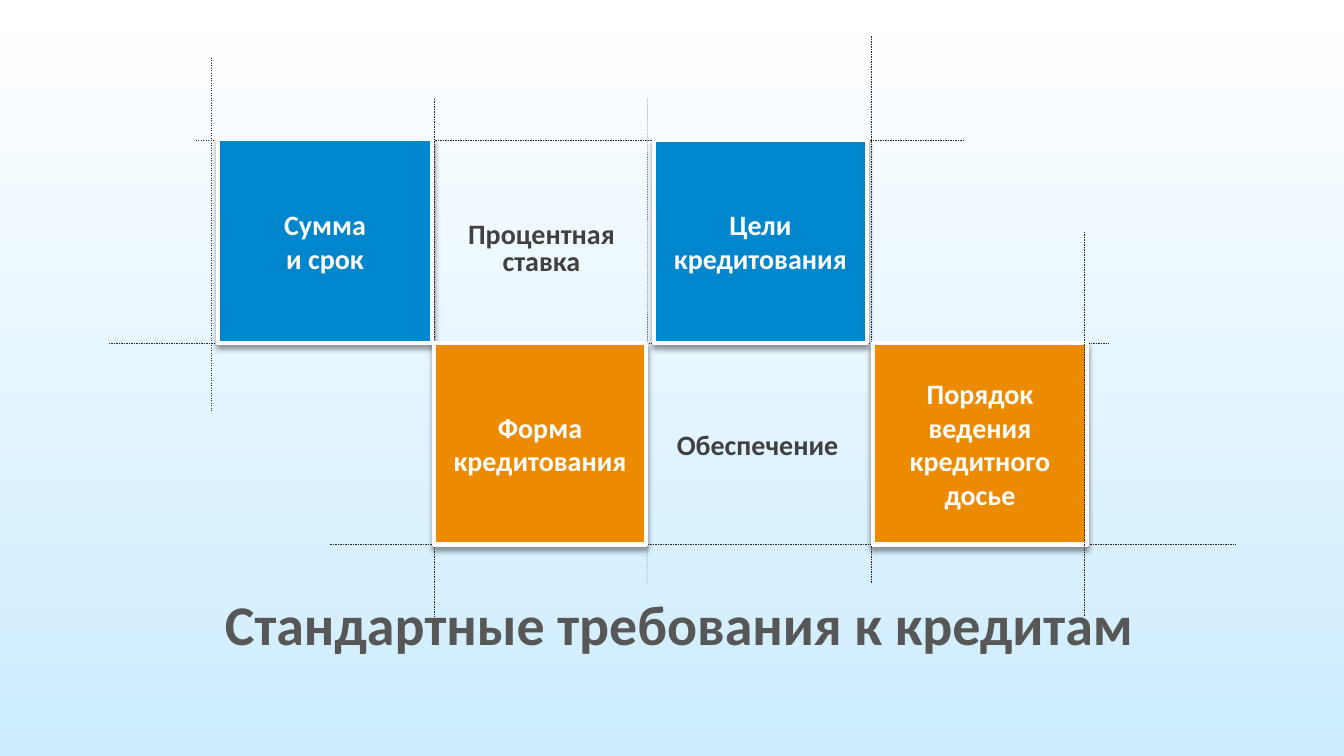
from lxml import etree
from pptx import Presentation
from pptx.dml.color import RGBColor
from pptx.enum.dml import MSO_LINE
from pptx.enum.shapes import MSO_CONNECTOR, MSO_SHAPE
from pptx.enum.text import MSO_ANCHOR, MSO_AUTO_SIZE, PP_ALIGN
from pptx.oxml import parse_xml
from pptx.oxml.ns import nsdecls, qn
from pptx.util import Cm, Pt

RECT, STRAIGHT, DASH = MSO_SHAPE.RECTANGLE, MSO_CONNECTOR.STRAIGHT, MSO_LINE.DASH
CENTER, MIDDLE, GROW = PP_ALIGN.CENTER, MSO_ANCHOR.MIDDLE, MSO_AUTO_SIZE.SHAPE_TO_FIT_TEXT

WHITE = RGBColor(0xFF, 0xFF, 0xFF)
SKY = RGBColor(0xCC, 0xEC, 0xFF)
BLUE = RGBColor(0x00, 0x86, 0xCD)
ORANGE = RGBColor(0xED, 0x8B, 0x00)
GUIDE = RGBColor(0x26, 0x26, 0x26)
DARK = RGBColor(0x40, 0x40, 0x40)
GREY = RGBColor(0x57, 0x57, 0x57)

TITLE_ONLY = 5
SHADOW = (
    f'<a:effectLst {nsdecls("a")}>'
    '<a:outerShdw blurRad="50800" dist="38100" dir="5400000" algn="t" rotWithShape="0">'
    '<a:srgbClr val="000000"><a:alpha val="40000"/></a:srgbClr>'
    '</a:outerShdw></a:effectLst>'
)

# Guide lines in cm: x1, y1, x2, y2
BACK_GUIDES = [
    (5.33, 1.45, 5.33, 10.34),
    (10.95, 2.49, 10.95, 15.54),
    (16.33, 2.49, 16.31, 14.68),
    (21.95, 0.91, 21.95, 14.68),
    (2.74, 8.66, 27.94, 8.66),
    (8.33, 13.72, 31.14, 13.72),
    (4.93, 3.53, 24.33, 3.53),
]
FRONT_GUIDE = (27.33, 5.84, 27.33, 15.54)

# Boxes in cm: left, top, width, height
CAPTIONS = [
    ("Процентная ставка", (11.53, 5.49, 4.24, 1.65)),
    ("Обеспечение", (16.66, 10.8, 4.88, 0.94)),
]
TILES = [
    ("Сумма\nи срок", (5.49, 3.51, 5.41, 5.13), BLUE),
    ("Форма кредитования", (10.95, 8.64, 5.33, 5.08), ORANGE),
    ("Цели кредитования", (16.48, 3.53, 5.38, 5.11), BLUE),
    ("Порядок ведения кредитного досье", (22, 8.64, 5.41, 5.08), ORANGE),
]


class Deck:
    font = {"name": "Calibri", "bold": True}

    def __init__(self, width, height):
        self.prs = Presentation()
        self.prs.slide_width, self.prs.slide_height = Cm(width), Cm(height)
        self.slide = self.prs.slides.add_slide(self.prs.slide_layouts[TITLE_ONLY])

    def background(self, top, bottom):
        fill = self.slide.background.fill
        fill.gradient()
        fill.gradient_angle = 270
        for stop, color in zip(fill.gradient_stops, (top, bottom)):
            stop.color.rgb = color

    def set_text(self, sp, text, size, color, spacing=1.0, **frame):
        """Fill a shape with centred text; frame holds text frame settings."""
        tf = sp.text_frame
        tf.text = text
        for name, value in {"word_wrap": True, **frame}.items():
            setattr(tf, name, value)
        for p in tf.paragraphs:
            p.alignment, p.line_spacing = CENTER, spacing
            for r in p.runs:
                for name, value in {**self.font, "size": Pt(size)}.items():
                    setattr(r.font, name, value)
                r.font.color.rgb = color

    def title(self, text, box):
        sp = self.slide.shapes.title
        sp.left, sp.top, sp.width, sp.height = map(Cm, box)
        self.set_text(sp, text, 40, GREY, auto_size=GROW, vertical_anchor=MIDDLE)

    def guide(self, ends):
        line = self.slide.shapes.add_connector(STRAIGHT, *map(Cm, ends))
        line.line.color.rgb = GUIDE
        line.line.width = Pt(0.25)
        line.line.dash_style = DASH
        etree.SubElement(line._element.spPr, qn("a:effectLst"))

    def caption(self, text, box):
        sp = self.slide.shapes.add_textbox(*map(Cm, box))
        self.set_text(sp, text, 20, DARK, spacing=0.8, auto_size=GROW,
                      margin_left=0, margin_right=0)

    def tile(self, text, box, color):
        sp = self.slide.shapes.add_shape(RECT, *map(Cm, box))
        sp.fill.solid()
        sp.fill.fore_color.rgb = color
        sp.line.color.rgb = WHITE
        sp.line.width = Pt(3)
        sp._element.spPr.append(parse_xml(SHADOW))
        self.set_text(sp, text, 20, WHITE, vertical_anchor=MIDDLE)


def main():
    deck = Deck(33.88, 19.05)
    deck.background(WHITE, SKY)
    deck.title("Стандартные требования к кредитам", (3.12, 14.73, 27.99, 1.96))
    for ends in BACK_GUIDES:
        deck.guide(ends)
    for caption in CAPTIONS:
        deck.caption(*caption)
    for tile in TILES:
        deck.tile(*tile)
    deck.guide(FRONT_GUIDE)
    deck.prs.save("out.pptx")


if __name__ == "__main__":
    main()
